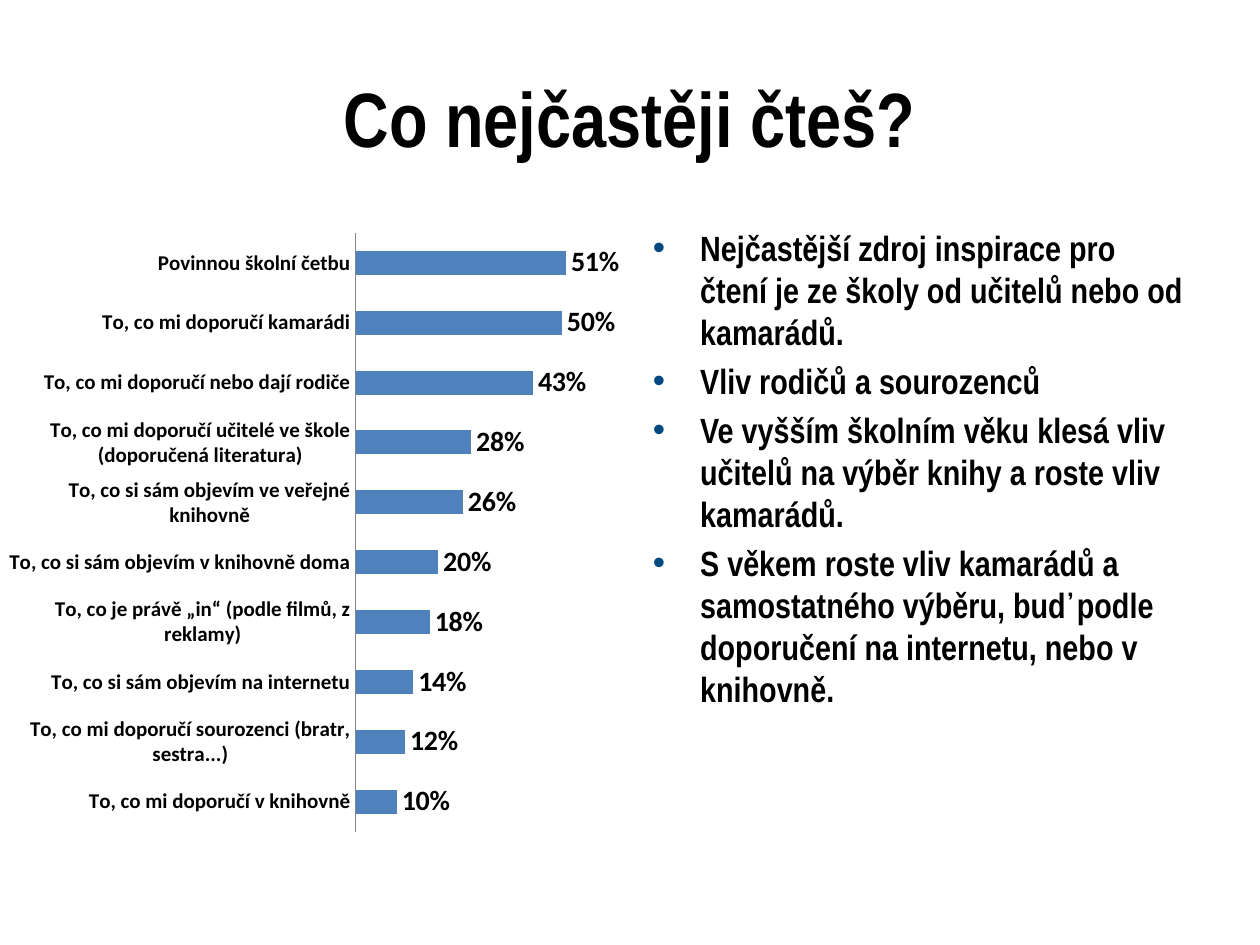
from dataclasses import dataclass
from typing import Any

from lxml import etree
from pptx import Presentation
from pptx import util as u
from pptx.chart.data import CategoryChartData
from pptx.dml.color import RGBColor
from pptx.enum import chart as charts, text
from pptx.oxml import ns

BLACK = RGBColor(0x00, 0x00, 0x00)
BULLET_BLUE = RGBColor(0x00, 0x48, 0x80)
BAR_BLUE = RGBColor(0x4F, 0x81, 0xBD)
AXIS_GREY = RGBColor(0x86, 0x86, 0x86)

READING_SOURCES = {
    "Povinnou školní četbu": 0.51,
    "To, co mi doporučí kamarádi": 0.50,
    "To, co mi doporučí nebo dají rodiče": 0.43,
    "To, co mi doporučí učitelé ve škole (doporučená literatura)": 0.28,
    "To, co si sám objevím ve veřejné knihovně": 0.26,
    "To, co si sám objevím v knihovně doma": 0.20,
    "To, co je právě „in“ (podle filmů, z reklamy)": 0.18,
    "To, co si sám objevím na internetu": 0.14,
    "To, co mi doporučí sourozenci (bratr, sestra...)": 0.12,
    "To, co mi doporučí v knihovně": 0.10,
}
FINDINGS = [
    "Nejčastější zdroj inspirace pro čtení je ze školy od učitelů nebo od kamarádů.",
    "Vliv rodičů a sourozenců",
    "Ve vyšším školním věku klesá vliv učitelů na výběr knihy a roste vliv kamarádů.",
    "S věkem roste vliv kamarádů a samostatného výběru, buď podle doporučení "
    "na internetu, nebo v knihovně.",
]


def box(left, top, width, height):
    return [u.Pt(length) for length in (left, top, width, height)]


def set_font(font, name, size):
    font.name = name
    font.size = u.Pt(size)
    font.bold = True
    font.color.rgb = BLACK


def add_bullet(paragraph, indent):
    properties = paragraph._p.get_or_add_pPr()
    properties.set("marL", str(u.Pt(indent)))
    properties.set("indent", str(-u.Pt(indent)))
    color = etree.SubElement(properties, ns.qn("a:buClr"))
    etree.SubElement(color, ns.qn("a:srgbClr"), val=str(BULLET_BLUE))
    etree.SubElement(properties, ns.qn("a:buFont"), typeface="Arial")
    etree.SubElement(properties, ns.qn("a:buChar"), char="•")


def place_plot(chart, x, y, w, h):
    """Fix the inner plot area, in fractions of the chart."""
    plot_area = chart._chartSpace.find(".//" + ns.qn("c:plotArea"))
    layout = plot_area.find(ns.qn("c:layout"))
    if layout is None:
        layout = etree.Element(ns.qn("c:layout"))
        plot_area.insert(0, layout)
    manual = etree.SubElement(layout, ns.qn("c:manualLayout"))
    values = {"layoutTarget": "inner", "xMode": "edge", "yMode": "edge",
              "x": x, "y": y, "w": w, "h": h}
    for tag, value in values.items():
        etree.SubElement(manual, ns.qn("c:" + tag), val=str(value))


@dataclass
class SlideBuilder:
    slide: Any
    text_font: str = "Arial Narrow"
    chart_font: str = "Calibri"

    def title(self, wording, position):
        shape = self.slide.shapes.title
        shape.left, shape.top, shape.width, shape.height = position
        frame = shape.text_frame
        frame.text = wording
        frame.vertical_anchor = text.MSO_ANCHOR.MIDDLE
        paragraph = frame.paragraphs[0]
        paragraph.alignment = text.PP_ALIGN.CENTER
        set_font(paragraph.runs[0].font, self.text_font, 44)

    def bullets(self, items, position):
        frame = self.slide.shapes.add_textbox(*position).text_frame
        frame.word_wrap = True
        frame.text = "\n".join(items)
        for index, paragraph in enumerate(frame.paragraphs):
            if index:
                paragraph.space_before = u.Pt(4)
            add_bullet(paragraph, 27)
            set_font(paragraph.runs[0].font, self.text_font, 20)

    def bar_chart(self, values, position):
        data = CategoryChartData(number_format="###0%")
        data.categories = list(values)
        data.add_series("Series 1", list(values.values()))
        chart = self.slide.shapes.add_chart(
            charts.XL_CHART_TYPE.BAR_CLUSTERED, *position, data).chart
        chart.has_legend = False
        chart.has_title = False
        chart.font.name = self.chart_font
        chart.font.size = u.Pt(10)
        place_plot(chart, 0.574, 0.02, 0.4, 0.96)

        categories = chart.category_axis
        categories.reverse_order = True
        categories.major_tick_mark = charts.XL_TICK_MARK.NONE
        categories.format.line.color.rgb = AXIS_GREY
        categories.format.line.width = u.Pt(0.75)
        set_font(categories.tick_labels.font, self.chart_font, 12)
        scale = chart.value_axis
        scale.minimum_scale, scale.maximum_scale = 0, 0.6
        scale.has_major_gridlines = False
        scale.visible = False

        plot = chart.plots[0]
        plot.vary_by_categories = False
        plot.gap_width, plot.overlap = 150, -25
        fill = plot.series[0].format.fill
        fill.solid()
        fill.fore_color.rgb = BAR_BLUE
        plot.has_data_labels = True
        labels = plot.data_labels
        labels.show_value = True
        labels.number_format = "###0%"
        labels.number_format_is_linked = False
        labels.position = charts.XL_LABEL_POSITION.OUTSIDE_END
        set_font(labels.font, self.chart_font, 16)


def main():
    presentation = Presentation()
    presentation.slide_width, presentation.slide_height = u.Pt(720), u.Pt(540)
    title_only = presentation.slide_layouts[5]
    builder = SlideBuilder(presentation.slides.add_slide(title_only))
    builder.title("Co nejčastěji čteš?", box(36, 21.6, 648, 90))
    builder.bullets(FINDINGS, box(366, 126, 318, 356.4))
    builder.bar_chart(READING_SOURCES, box(0, 126, 354, 356.4))
    presentation.save("out.pptx")


if __name__ == "__main__":
    main()
